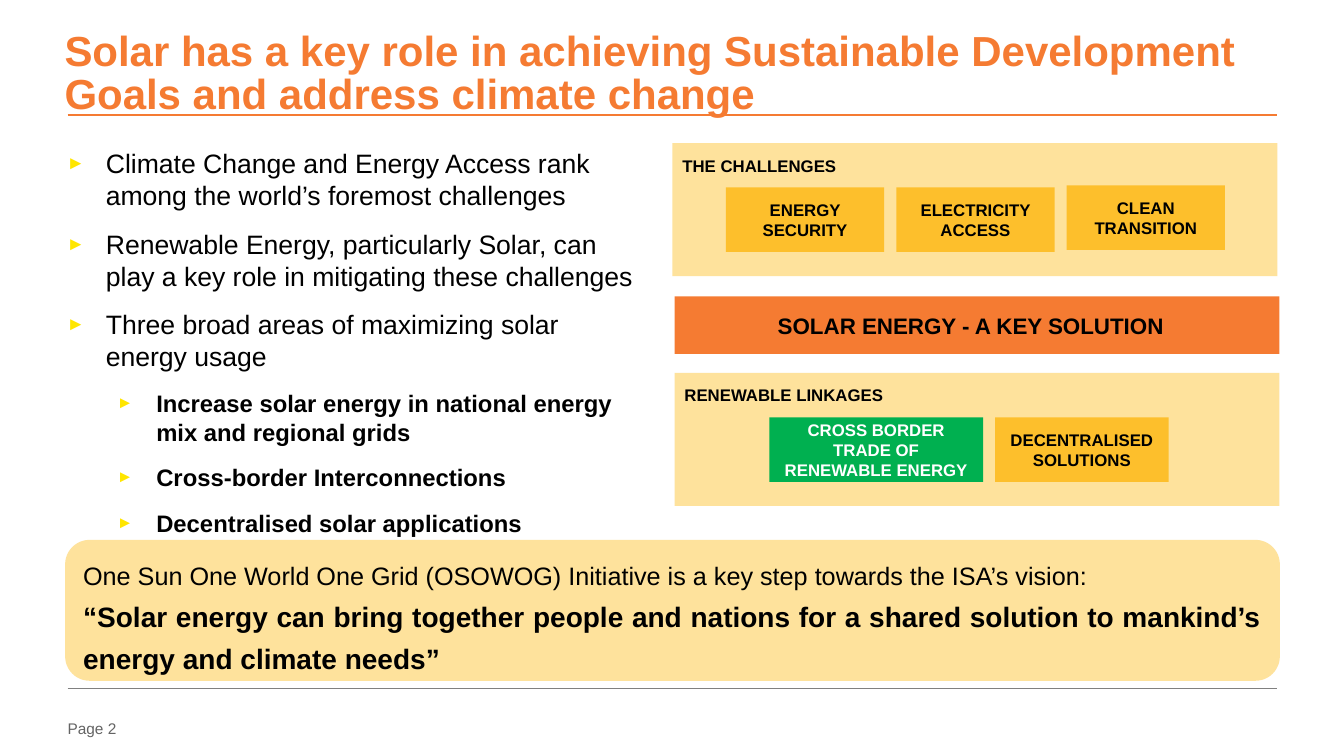
from dataclasses import dataclass

from lxml import etree
from pptx import Presentation
from pptx.dml.color import RGBColor
from pptx.enum.shapes import MSO_CONNECTOR, MSO_SHAPE
from pptx.enum.text import MSO_ANCHOR, PP_ALIGN
from pptx.oxml.ns import qn
from pptx.util import Inches, Pt

RECTANGLE = MSO_SHAPE.RECTANGLE
ROUNDED = MSO_SHAPE.FLOWCHART_ALTERNATE_PROCESS
STRAIGHT = MSO_CONNECTOR.STRAIGHT
TOP, MIDDLE = MSO_ANCHOR.TOP, MSO_ANCHOR.MIDDLE
LEFT, CENTER, JUSTIFY = PP_ALIGN.LEFT, PP_ALIGN.CENTER, PP_ALIGN.JUSTIFY


@dataclass(frozen=True)
class Theme:
    font: str = "Arial"
    orange: str = "F57B32"
    cream: str = "FEE29C"
    amber: str = "FDBF2C"
    green: str = "00B050"
    yellow: str = "FFE600"
    black: str = "000000"
    white: str = "FFFFFF"
    gray: str = "808080"
    footer_gray: str = "646464"
    title: int = 30
    quote: int = 20
    body: int = 19
    intro: int = 18
    sub_body: int = 17
    banner: int = 16
    label: int = 12
    footer: int = 11


THEME = Theme()
BOX_INSETS = (0.1, 0.05, 0.1, 0.05)
PANEL_INSETS = (0.1, 0.12, 0.1, 0.05)
NO_INSETS = (0, 0, 0, 0)


def rgb(color):
    return RGBColor.from_string(color)


def set_frame(shape, insets=BOX_INSETS, anchor=TOP):
    frame = shape.text_frame
    frame.word_wrap = True
    frame.vertical_anchor = anchor
    (frame.margin_left, frame.margin_top,
     frame.margin_right, frame.margin_bottom) = map(Inches, insets)


def write(shape, text, size=THEME.label, color=THEME.black, bold=False,
          align=LEFT, spacing=None, after=0):
    """Fill the empty first paragraph, or append one, and return it."""
    frame = shape.text_frame
    para = frame.paragraphs[0] if not frame.text else frame.add_paragraph()
    para.alignment = align
    para.line_spacing = spacing
    para.space_after = Pt(after)
    span = para.add_run()
    span.text = text
    span.font.name = THEME.font
    span.font.size = Pt(size)
    span.font.bold = bold
    span.font.color.rgb = rgb(color)
    return para


def add_bullet(para, level):
    para.level = level
    props = para._p.get_or_add_pPr()
    props.set("marL", str(Inches(0.39 + 0.5 * level)))
    props.set("indent", str(Inches(-0.39)))
    color = etree.SubElement(props, qn("a:buClr"))
    etree.SubElement(color, qn("a:srgbClr"), val=THEME.yellow)
    etree.SubElement(props, qn("a:buSzPct"), val="70000")
    etree.SubElement(props, qn("a:buFont"), typeface=THEME.font)
    etree.SubElement(props, qn("a:buChar"), char="►")


def add_text_box(page, place, insets=NO_INSETS, anchor=TOP):
    box = page.shapes.add_textbox(*map(Inches, place))
    set_frame(box, insets, anchor)
    return box


def add_block(page, place, fill, kind=RECTANGLE, insets=BOX_INSETS, anchor=TOP):
    block = page.shapes.add_shape(kind, *map(Inches, place))
    block.shadow.inherit = False
    block.fill.solid()
    block.fill.fore_color.rgb = rgb(fill)
    block.line.fill.background()
    set_frame(block, insets, anchor)
    return block


def add_panel(page, left, top, heading):
    panel = add_block(page, (left, top, 6, 1.32), THEME.cream, insets=PANEL_INSETS)
    write(panel, heading, bold=True)


def add_tile(page, left, top, width, text, fill=THEME.amber, color=THEME.black):
    tile = add_block(page, (left, top, width, 0.64), fill, anchor=MIDDLE)
    write(tile, text, color=color, bold=True, align=CENTER)


def add_rule(page, top, color, weight):
    rule = page.shapes.add_connector(
        STRAIGHT, Inches(0.67), Inches(top), Inches(12.67), Inches(top))
    rule.line.color.rgb = rgb(color)
    rule.line.width = Pt(weight)
    etree.SubElement(rule._element.spPr, qn("a:effectLst"))


def add_bullets(page):
    box = add_text_box(page, (0.66, 1.42, 5.72, 3.94), insets=(0, 0.04, 0, 0))
    bullets = [
        (0, "Climate Change and Energy Access rank among the world’s foremost challenges"),
        (0, "Renewable Energy, particularly Solar, can play a key role in "
            "mitigating these challenges"),
        (0, "Three broad areas of maximizing solar energy usage"),
        (1, "Increase solar energy in national energy mix and regional grids"),
        (1, "Cross-border Interconnections"),
        (1, "Decentralised solar applications"),
    ]
    for level, text in bullets:
        size = THEME.sub_body if level else THEME.body
        add_bullet(write(box, text, size=size, bold=level == 1, after=12), level)


def add_diagram(page):
    # Challenges
    add_panel(page, 6.67, 1.42, "THE CHALLENGES")
    challenges = [("ENERGY SECURITY", 1.86), ("ELECTRICITY ACCESS", 1.86),
                  ("CLEAN TRANSITION", 1.84)]
    for column, (text, top) in enumerate(challenges):
        add_tile(page, 7.2 + 1.69 * column, top, 1.57, text)

    # Solution banner
    banner = add_block(page, (6.69, 2.94, 6, 0.57), THEME.orange,
                       insets=(0.1, 0.05, 0.22, 0.05), anchor=MIDDLE)
    write(banner, "SOLAR ENERGY - A KEY SOLUTION", size=THEME.banner,
          bold=True, align=CENTER)

    # Linkages
    add_panel(page, 6.69, 3.7, "RENEWABLE LINKAGES")
    add_tile(page, 7.63, 4.14, 2.12, "CROSS BORDER TRADE OF RENEWABLE ENERGY",
             fill=THEME.green, color=THEME.white)
    add_tile(page, 9.87, 4.14, 1.72, "DECENTRALISED SOLUTIONS")


def add_vision(page):
    vision = add_block(page, (0.66, 5.37, 12.02, 1.37), THEME.cream, kind=ROUNDED)
    vision.line.color.rgb = rgb(THEME.cream)
    vision.line.width = Pt(2)
    write(vision, "One Sun One World One Grid (OSOWOG) Initiative is a key step "
          "towards the ISA’s vision:", size=THEME.intro, align=JUSTIFY, spacing=1.25)
    write(vision, "“Solar energy can bring together people and nations for a shared "
          "solution to mankind’s energy and climate needs”",
          size=THEME.quote, bold=True, align=JUSTIFY, spacing=1.25)


def main():
    deck = Presentation()
    deck.slide_width, deck.slide_height = Inches(13.33), Inches(7.5)
    page = deck.slides.add_slide(deck.slide_layouts[6])

    # Frame of the page
    add_rule(page, 1.14, THEME.orange, 1.5)
    add_rule(page, 6.83, THEME.gray, 0.25)
    footer = add_text_box(page, (0.67, 7.13, 0.97, 0.22))
    write(footer, "Page 2", size=THEME.footer, color=THEME.footer_gray)
    title = add_text_box(page, (0.64, 0.52, 12.04, 0.46), anchor=MIDDLE)
    write(title, "Solar has a key role in achieving Sustainable Development "
          "Goals and address climate change",
          size=THEME.title, color=THEME.orange, bold=True, spacing=0.85)

    # Content
    add_bullets(page)
    add_diagram(page)
    add_vision(page)
    deck.save("out.pptx")


if __name__ == "__main__":
    main()
